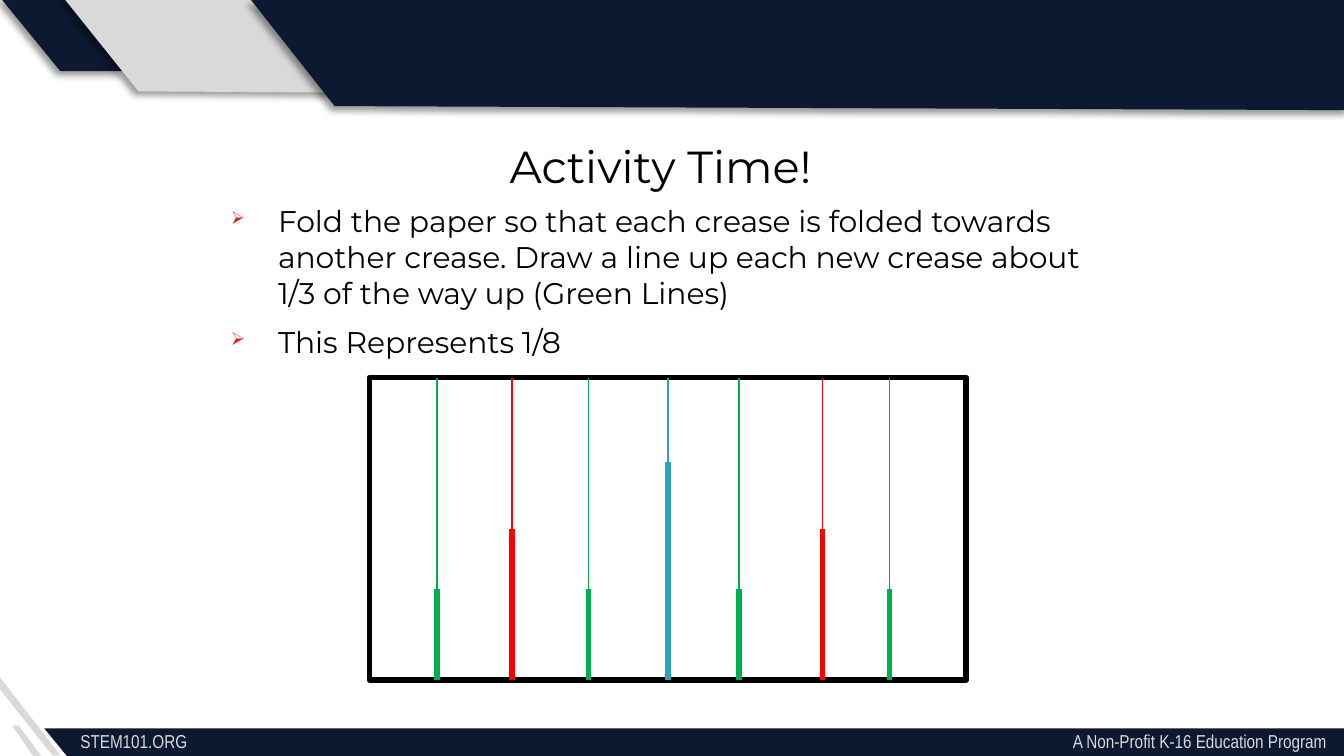
from lxml import etree
from pptx import Presentation
from pptx.dml.color import RGBColor
from pptx.enum.shapes import MSO_CONNECTOR, MSO_SHAPE
from pptx.enum.text import PP_ALIGN
from pptx.oxml.ns import qn
from pptx.util import Inches, Pt

STRAIGHT = MSO_CONNECTOR.STRAIGHT
RECTANGLE = MSO_SHAPE.RECTANGLE
CENTER = PP_ALIGN.CENTER

NAVY = RGBColor(0x0C, 0x19, 0x30)
GREY = RGBColor(0xD9, 0xD9, 0xD9)
BLACK = RGBColor(0x00, 0x00, 0x00)
BLUE = RGBColor(0x2D, 0xA2, 0xBF)
RED = RGBColor(0xFF, 0x00, 0x00)
GREEN = RGBColor(0x00, 0xB0, 0x50)
BULLET_RED = RGBColor(0xDA, 0x1F, 0x28)

BODY_FONT = "Montserrat"
FOOTER_FONT = "Arial Narrow"


def add_element(parent, tag, **attributes):
    element = etree.SubElement(parent, qn(tag))
    for name, value in attributes.items():
        element.set(name, str(value))
    return element


def add_shadow(shape):
    effects = add_element(shape._element.spPr, "a:effectLst")
    shadow = add_element(effects, "a:outerShdw", blurRad=Pt(4), dist=Pt(3),
                         dir=135 * 60000, algn="tr", rotWithShape=0)
    color = add_element(shadow, "a:srgbClr", val=BLACK)
    add_element(color, "a:alpha", val=40000)


def add_polygon(slide, left, top, points, color, shadow=False):
    corners = [(Inches(left + x), Inches(top + y)) for x, y in points]
    builder = slide.shapes.build_freeform(*corners[0])
    builder.add_line_segments(corners[1:], close=True)
    shape = builder.convert_to_shape()
    shape.fill.solid()
    shape.fill.fore_color.rgb = color
    shape.line.fill.background()
    if shadow:
        add_shadow(shape)
    else:
        shape.shadow.inherit = False


def add_text_box(slide, left, top, width, height):
    box = slide.shapes.add_textbox(Inches(left), Inches(top),
                                   Inches(width), Inches(height))
    box.text_frame.word_wrap = True
    return box.text_frame


def format_font(paragraph, name, size, color):
    for run in paragraph.runs:
        run.font.name = name
        run.font.size = Pt(size)
        run.font.color.rgb = color


def add_line(slide, x, bottom, top, color, weight):
    line = slide.shapes.add_connector(STRAIGHT, Inches(x), Inches(bottom),
                                      Inches(x), Inches(top))
    line.line.color.rgb = color
    line.line.width = Pt(weight)
    add_element(line._element.spPr, "a:effectLst")


def add_header(slide, left, top):
    bands = [
        ([(0.45, 0.55), (0, 0), (0.48, 0), (0.93, 0.55)], NAVY),
        ([(1.03, 0.7), (0.47, 0), (2.04, 0), (2.59, 0.71)], GREY),
        ([(2.49, 0.81), (1.86, 0.01), (10.02, 0.01), (10.04, 0.84)], NAVY),
    ]
    for points, color in bands:
        add_polygon(slide, left, top, points, color, shadow=True)


def add_footer(slide, left, top):
    # Corner stripes and bar
    pieces = [
        ([(0.31, 0.59), (0.25, 0.59), (0.09, 0.36), (0.14, 0.36)], GREY),
        ([(0.45, 0.58), (0.39, 0.58), (0, 0.09), (0, 0)], GREY),
        ([(10.06, 0.61), (0.51, 0.6), (0.33, 0.38), (10.07, 0.38)], NAVY),
    ]
    for points, color in pieces:
        add_polygon(slide, left, top, points, color)

    # Address on the left, tagline at a right tab
    frame = add_text_box(slide, left + 0.5, top + 0.34, 9.5, 0.27)
    paragraph = frame.paragraphs[0]
    paragraph.text = "STEM101.ORG\tA Non-Profit K-16 Education Program"
    tabs = add_element(paragraph._p.get_or_add_pPr(), "a:tabLst")
    add_element(tabs, "a:tab", pos=Inches(9.27), algn="r")
    format_font(paragraph, FOOTER_FONT, 10, GREY)


def add_title(slide, left, top, width, height):
    frame = add_text_box(slide, left, top, width, height)
    paragraph = frame.paragraphs[0]
    paragraph.text = "Activity Time!"
    paragraph.alignment = CENTER
    format_font(paragraph, BODY_FONT, 24, BLACK)


def add_instructions(slide, left, top, width, height):
    frame = add_text_box(slide, left, top, width, height)
    frame.text = (
        "Fold the paper so that each crease is folded towards another crease. "
        "Draw a line up each new crease about 1/3 of the way up (Green Lines)\n"
        "This Represents 1/8"
    )
    for index, paragraph in enumerate(frame.paragraphs):
        if index:
            paragraph.space_before = Pt(7)
        properties = paragraph._p.get_or_add_pPr()
        properties.set("marL", str(Inches(0.35)))
        properties.set("indent", str(-Inches(0.35)))
        bullet_color = add_element(properties, "a:buClr")
        add_element(bullet_color, "a:srgbClr", val=BULLET_RED)
        add_element(properties, "a:buSzPct", val=60000)
        add_element(properties, "a:buChar", char="➢")
        format_font(paragraph, BODY_FONT, 16, BLACK)


def add_folded_paper(slide, left, top, width, height):
    # Sheet outline
    sheet = slide.shapes.add_shape(RECTANGLE, Inches(left), Inches(top),
                                   Inches(width), Inches(height))
    sheet.shadow.inherit = False
    sheet.fill.background()
    sheet.line.color.rgb = BLACK
    sheet.line.width = Pt(3)

    # Creases: colour, height of the drawn line, positions across the sheet
    creases = [
        (BLUE, 1.62, [2.22]),
        (RED, 1.12, [1.06, 3.37]),
        (GREEN, 0.68, [0.5, 1.63, 2.75, 3.87]),
    ]
    bottom = top + height
    for color, drawn_height, offsets in creases:
        for offset in offsets:
            add_line(slide, left + offset, bottom, top, color, 0.79)
            add_line(slide, left + offset, bottom, bottom - drawn_height,
                     color, 3)


def main():
    presentation = Presentation()
    presentation.slide_width = Inches(10)
    presentation.slide_height = Inches(10) * 9 // 16
    slide = presentation.slides.add_slide(presentation.slide_layouts[6])

    add_header(slide, 0, -0.02)
    add_footer(slide, 0, 5.04)
    add_instructions(slide, 1.62, 1.46, 6.75, 1.5)
    add_folded_paper(slide, 2.75, 2.81, 4.44, 2.25)
    add_title(slide, 1.06, 0.98, 7.71, 0.5)

    presentation.save("out.pptx")


if __name__ == "__main__":
    main()
